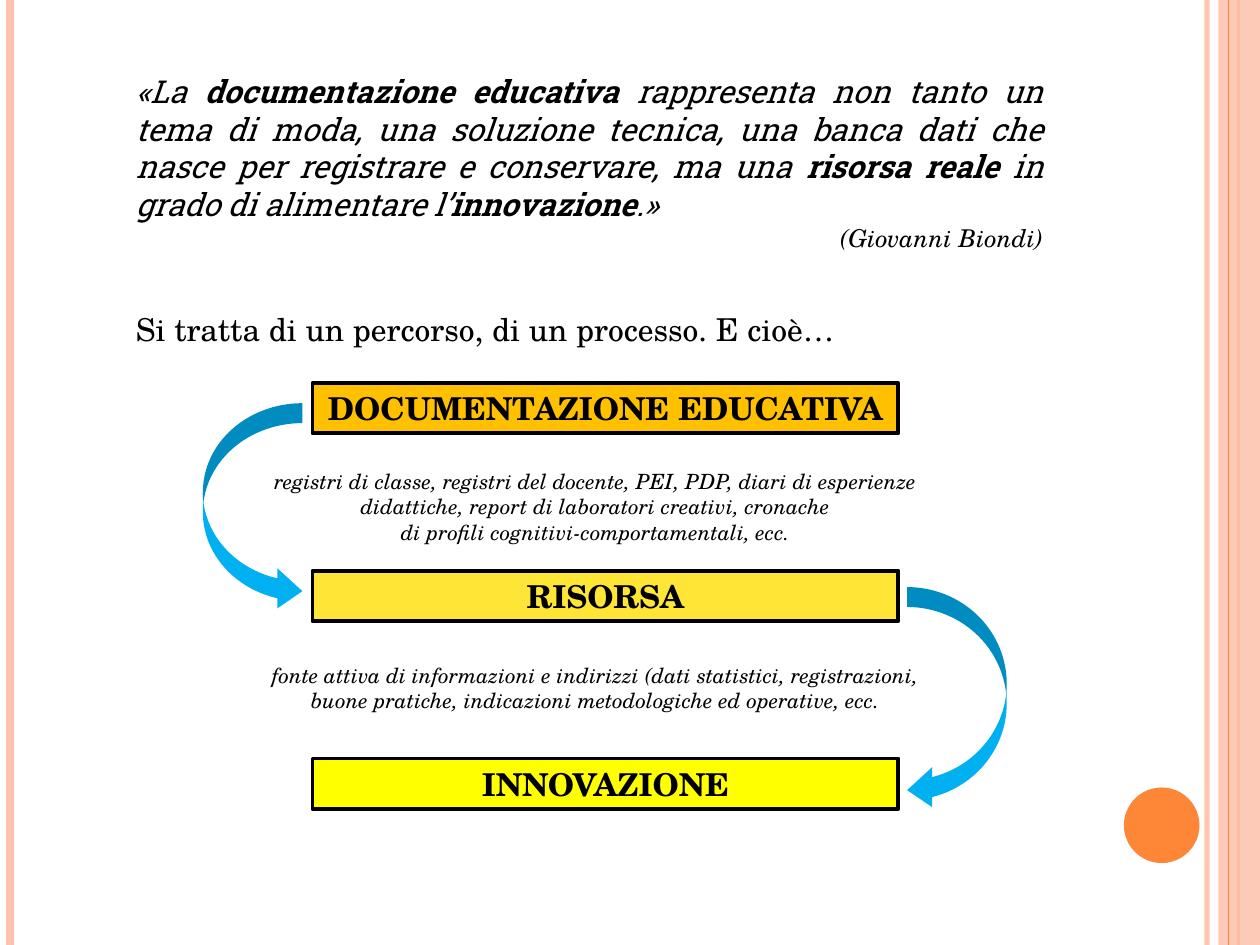
from pptx import Presentation
from pptx import util as u
from pptx.dml.color import RGBColor
from pptx.enum import shapes, text
from pptx.oxml import ns, xmlchemy

SHAPE = shapes.MSO_SHAPE
ALIGN = text.PP_ALIGN
PEACH, ORANGE, BLACK, BLUE = "FEC3AE", "FE8637", "000000", "00B0F0"
SERIF, SLAB = "TeX Gyre Schola", "Roboto Slab"


def color(hex_string):
    return RGBColor.from_string(hex_string)


class SlideBuilder:
    """Holds the text style and the current slide."""

    def __init__(self, slide, font=SERIF, ink=BLACK):
        self.slide, self.font, self.ink = slide, font, ink

    def set_alpha(self, fill, percent):
        """Make a solid fill partly transparent."""
        fill_color = fill._xPr.find(ns.qn("a:solidFill"))[0]
        alpha = xmlchemy.OxmlElement("a:alpha")
        alpha.set("val", str(percent * 1000))
        fill_color.append(alpha)

    def stripe(self, x, hex_string, width, alpha=100):
        """Vertical line over the full slide height."""
        line = self.slide.shapes.add_connector(
            shapes.MSO_CONNECTOR.STRAIGHT,
            u.Inches(x), 0, u.Inches(x), u.Inches(7.5))
        line.line.color.rgb = color(hex_string)
        line.line.width = u.Pt(width)
        if alpha < 100:
            self.set_alpha(line.line.fill, alpha)
        line.element.spPr.append(xmlchemy.OxmlElement("a:effectLst"))

    def shape(self, kind, box, fill, border=None, alpha=100):
        shape = self.slide.shapes.add_shape(kind, *map(u.Inches, box))
        shape.shadow.inherit = False
        shape.fill.solid()
        shape.fill.fore_color.rgb = color(fill)
        if alpha < 100:
            self.set_alpha(shape.fill, alpha)
        if border:
            shape.line.color.rgb = color(BLACK)
            shape.line.width = u.Pt(border)
        else:
            shape.line.fill.background()
        return shape

    def paragraph(self, paragraph, words, size, align=ALIGN.LEFT, font=None,
                  **style):
        """Fill one paragraph; parts between asterisks are bold."""
        paragraph.alignment = align
        paragraph.font.name = font or self.font
        paragraph.font.size = u.Pt(size)
        paragraph.font.color.rgb = color(self.ink)
        for name, value in style.items():
            setattr(paragraph.font, name, value)
        for index, part in enumerate(words.split("*")):
            run = paragraph.add_run()
            run.text = part
            if index % 2:
                run.font.bold = True

    def text_box(self, box):
        frame = self.slide.shapes.add_textbox(*map(u.Inches, box)).text_frame
        frame.word_wrap = True
        return frame

    def examples(self, top, height, lines):
        """Centred italic note between two steps."""
        frame = self.text_box((1.77, top, 5.91, height))
        for index, line in enumerate(lines):
            paragraph = frame.add_paragraph() if index else frame.paragraphs[0]
            self.paragraph(paragraph, line, 12, ALIGN.CENTER, italic=True)

    def step(self, top, label, fill):
        frame = self.shape(SHAPE.RECTANGLE, (2.48, top, 4.65, 0.4), fill,
                           border=2.25).text_frame
        frame.word_wrap = True
        frame.margin_left = frame.margin_right = u.Inches(0.05)
        self.paragraph(frame.paragraphs[0], label, 18, ALIGN.CENTER, bold=True)

    def curved_arrow(self, box, mirrored=False):
        arrow = self.shape(SHAPE.CURVED_RIGHT_ARROW, box, BLUE)
        for index, value in enumerate((0.2, 0.4, 0.25)):
            arrow.adjustments[index] = value
        if mirrored:
            arrow.element.spPr.xfrm.set("flipH", "1")


def main():
    deck = Presentation()
    deck.slide_width, deck.slide_height = u.Inches(10), u.Inches(7.5)
    page = SlideBuilder(deck.slides.add_slide(deck.slide_layouts[6]))

    # Side decoration
    page.stripe(9.58, PEACH, 3, alpha=93)
    page.stripe(0.08, PEACH, 4.5)
    page.stripe(9.83, ORANGE, 1.5)
    page.shape(SHAPE.RECTANGLE, (9.67, 0, 0.33, 7.5), PEACH, alpha=87)
    page.stripe(9.75, ORANGE, 0.75)
    page.shape(SHAPE.OVAL, (8.92, 6.25, 0.6, 0.6), ORANGE)

    # Quotation and its author
    quote = page.text_box((0.98, 0.52, 7.4, 1.55))
    page.paragraph(
        quote.paragraphs[0],
        "«La *documentazione educativa* rappresenta non tanto un tema di moda, "
        "una soluzione tecnica, una banca dati che nasce per registrare e "
        "conservare, ma una *risorsa reale* in grado di alimentare "
        "l’*innovazione*.»",
        18, ALIGN.JUSTIFY, SLAB, italic=True)
    page.paragraph(quote.add_paragraph(), "(Giovanni Biondi)", 14,
                   ALIGN.RIGHT, italic=True)

    # Lead-in
    lead_in = page.text_box((0.98, 2.41, 7.24, 0.4))
    page.paragraph(lead_in.paragraphs[0],
                   "Si tratta di un percorso, di un processo. E cioè…", 18)

    # Three steps at equal distance
    steps = (("DOCUMENTAZIONE EDUCATIVA", "FFC000"),
             ("RISORSA", "FFE636"),
             ("INNOVAZIONE", "FFFF00"))
    for index, (label, fill) in enumerate(steps):
        page.step(3.04 + 1.49 * index, label, fill)

    # Arrows from step to step
    page.curved_arrow((1.61, 3.2, 0.79, 1.65))
    page.curved_arrow((7.2, 4.66, 0.79, 1.77), mirrored=True)

    # Examples under the first two steps
    page.examples(3.67, 0.71, (
        "registri di classe, registri del docente, PEI, PDP, diari di "
        "esperienze didattiche, report di laboratori creativi, cronache",
        "di profili cognitivi-comportamentali, ecc."))
    page.examples(5.21, 0.5, (
        "fonte attiva di informazioni e indirizzi (dati statistici, "
        "registrazioni,",
        "buone pratiche, indicazioni metodologiche ed operative, ecc."))

    deck.save("out.pptx")


if __name__ == "__main__":
    main()
